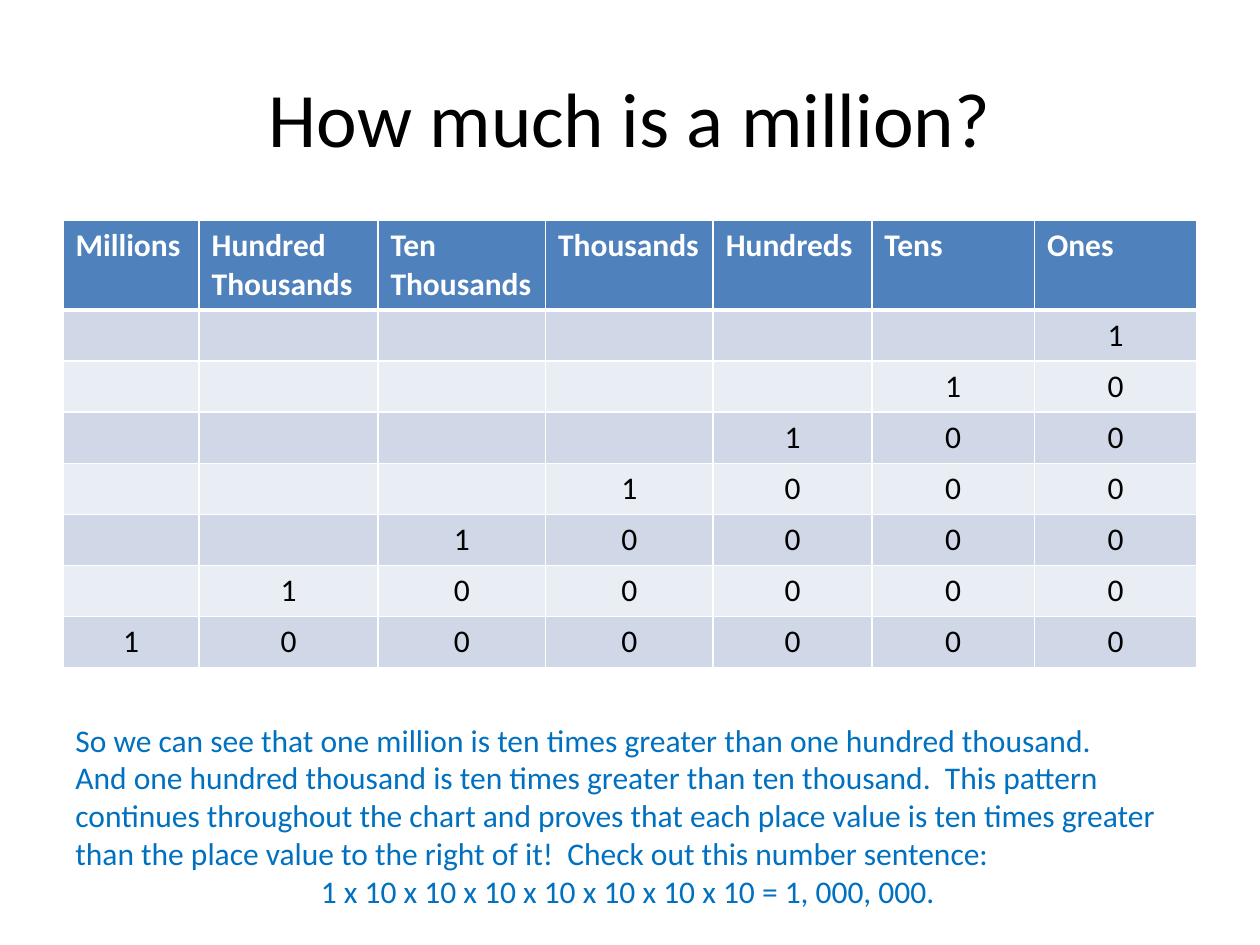
from pptx import Presentation
from pptx.dml.color import RGBColor
from pptx.enum.text import MSO_ANCHOR as Anchor, PP_ALIGN as Align
from pptx.oxml import parse_xml
from pptx.oxml.ns import nsdecls
from pptx.util import Pt

TITLE = "How much is a million?"
HEADS = [
    ("Millions", 77.8), ("Hundred Thousands", 102.2), ("Ten\nThousands", 95.8),
    ("Thousands", 95.8), ("Hundreds", 90.7), ("Tens", 92.9), ("Ones", 92.8),
]
NOTES = [
    ("So we can see that one million is ten times greater than one hundred thousand.",
     Align.LEFT),
    ("And one hundred thousand is ten times greater than ten thousand.  This pattern "
     "continues throughout the chart and proves that each place value is ten times "
     "greater than the place value to the right of it!  Check out this number sentence:",
     Align.LEFT),
    ("1 x 10 x 10 x 10 x 10 x 10 x 10 x 10 = 1, 000, 000.  ", Align.CENTER),
]
HEAD_FILL, BANDS = "4F81BD", ("E9EDF4", "D0D8E8")
HEAD_H, ROW_H = 50.5, 29.2


def color(code):
    return RGBColor.from_string(code)


def write(para, text, size=18, ink="000000", bold=False, align=Align.LEFT):
    para.alignment = align
    run = para.add_run()
    run.text = text
    font = run.font
    font.name, font.size, font.bold = "Calibri", Pt(size), bold
    font.color.rgb = color(ink)


def next_para(frame, index):
    return frame.add_paragraph() if index else frame.paragraphs[0]


def style(cell, fill, top, bottom):
    """Give the cell white borders and a solid fill."""
    props = cell._tc.get_or_add_tcPr()
    for side, width in zip("LRTB", (1, 1, top, bottom)):
        props.append(parse_xml(
            f'<a:ln{side} {nsdecls("a")} w="{Pt(width)}"><a:solidFill>'
            f'<a:srgbClr val="FFFFFF"/></a:solidFill></a:ln{side}>'))
    cell.fill.solid()
    cell.fill.fore_color.rgb = color(fill)


def add_chart_table(slide):
    count = len(HEADS)
    width = sum(w for _, w in HEADS)
    table = slide.shapes.add_table(
        count + 1, count, Pt(36), Pt(126), Pt(width), Pt(HEAD_H + count * ROW_H)).table
    for row in range(count + 1):
        table.rows[row].height = Pt(ROW_H if row else HEAD_H)
        for col, (head, wide) in enumerate(HEADS):
            table.columns[col].width = Pt(wide)
            cell = table.cell(row, col)
            style(cell, BANDS[row % 2] if row else HEAD_FILL,
                  top=3 if row == 1 else 1, bottom=1 if row else 3)
            frame = cell.text_frame
            lead = count - row
            if row == 0:
                for i, line in enumerate(head.split("\n")):
                    write(next_para(frame, i), line, ink="FFFFFF", bold=True)
            elif col >= lead:
                write(frame.paragraphs[0], "1" if col == lead else "0",
                      align=Align.CENTER)


def main():
    deck = Presentation()
    deck.slide_width, deck.slide_height = Pt(720), Pt(540)
    slide = deck.slides.add_slide(deck.slide_layouts[5])

    title = slide.shapes.title
    title.left, title.top, title.width, title.height = Pt(36), Pt(21.6), Pt(648), Pt(90)
    title.text_frame.vertical_anchor = Anchor.MIDDLE
    write(title.text_frame.paragraphs[0], TITLE, size=44, align=Align.CENTER)

    add_chart_table(slide)

    box = slide.shapes.add_textbox(Pt(36), Pt(408.2), Pt(653.8), Pt(116.6))
    box.text_frame.word_wrap = True
    for i, (text, align) in enumerate(NOTES):
        write(next_para(box.text_frame, i), text, ink="0070C0", align=align)

    deck.save("out.pptx")


if __name__ == "__main__":
    main()
